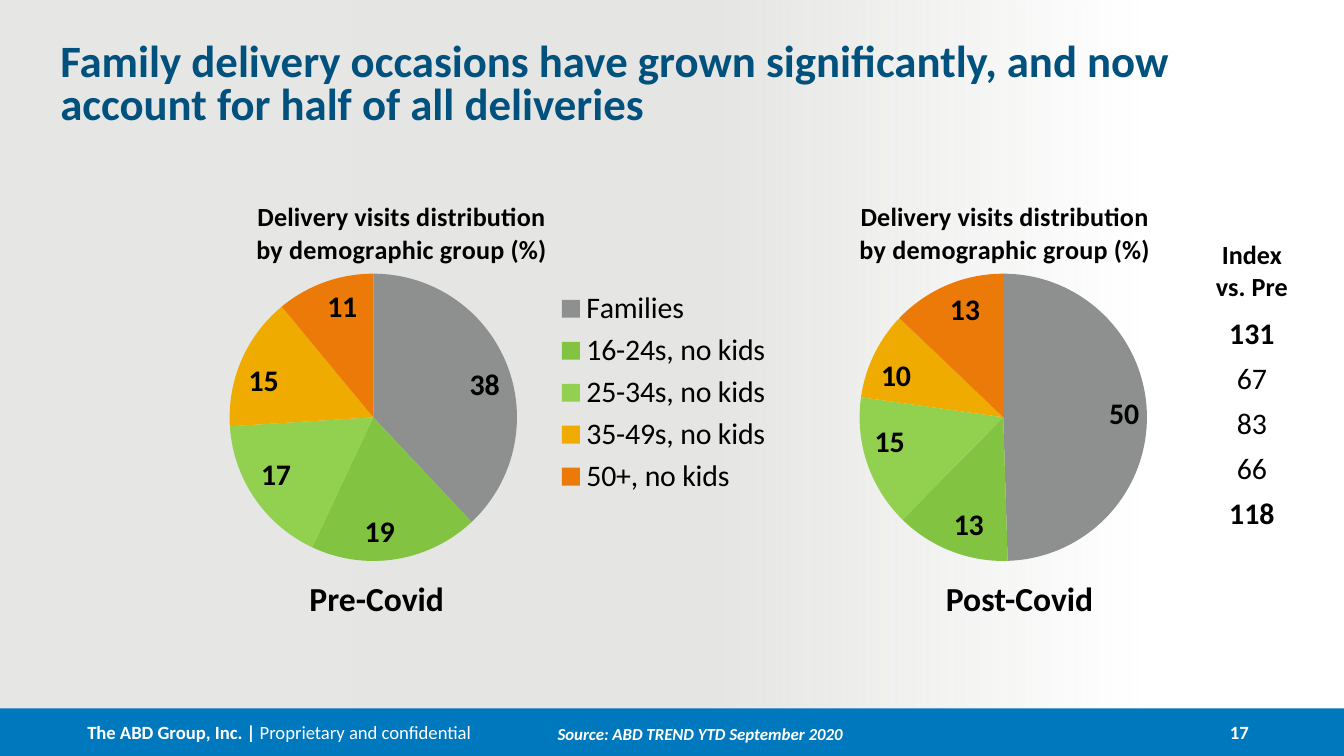
from lxml import etree
from pptx import Presentation
from pptx.chart.data import CategoryChartData
from pptx.dml.color import RGBColor
from pptx.enum.chart import XL_CHART_TYPE, XL_LABEL_POSITION, XL_LEGEND_POSITION
from pptx.enum.shapes import MSO_SHAPE
from pptx.enum.text import MSO_ANCHOR, MSO_AUTO_SIZE, PP_ALIGN
from pptx.oxml.ns import qn
from pptx.util import Cm, Pt

PIE = XL_CHART_TYPE.PIE
INSIDE_END = XL_LABEL_POSITION.INSIDE_END
LEGEND_RIGHT = XL_LEGEND_POSITION.RIGHT
RECTANGLE = MSO_SHAPE.RECTANGLE
TOP, MIDDLE = MSO_ANCHOR.TOP, MSO_ANCHOR.MIDDLE
LEFT, CENTER, RIGHT = PP_ALIGN.LEFT, PP_ALIGN.CENTER, PP_ALIGN.RIGHT
NO_AUTOFIT = MSO_AUTO_SIZE.NONE

FONT = "Calibri"
BLACK = RGBColor(0x00, 0x00, 0x00)
WHITE = RGBColor(0xFF, 0xFF, 0xFF)
BLUE = RGBColor(0x00, 0x78, 0xBE)
NAVY = RGBColor(0x00, 0x51, 0x7D)
SLICE_COLORS = [
    RGBColor(0x8E, 0x90, 0x8F),
    RGBColor(0x82, 0xC3, 0x41),
    RGBColor(0x92, 0xD0, 0x50),
    RGBColor(0xF0, 0xAB, 0x00),
    RGBColor(0xEC, 0x7A, 0x08),
]
BACKDROP_STOPS = [(0, "E5E5E3", 0), (38, "E5E5E3", 100), (100, "E6E6E5", 100)]

TITLE = ("Family delivery occasions have grown significantly, "
         "and now account for half of all deliveries")
CHART_TITLE = "Delivery visits distribution\nby demographic group (%)"
GROUPS = ["Families", "16-24s, no kids", "25-34s, no kids", "35-49s, no kids", "50+, no kids"]
PERIODS = [
    {"name": "Pre-Covid", "values": [38, 19, 17, 15, 11], "left": -2.24, "width": 17.09,
     "title_x": 0.41, "caption_left": 4.11, "legend": True},
    {"name": "Post-Covid", "values": [50, 13, 15, 10, 13], "left": 13.61, "width": 9.83,
     "title_x": 0.26, "caption_left": 16.26, "legend": False},
]
INDEX_HEADING = "Index\vvs. Pre"
INDEX_VALUES = ["131", "67", "83", "66", "118"]
GROWING = {"131", "118"}
COMPANY = "The ABD Group, Inc. | "
CONFIDENTIAL = "Proprietary and confidential"
SOURCE = "Source: ABD TREND YTD September 2020"
PAGE_NUMBER = "17"

SLIDE_WIDTH, SLIDE_HEIGHT = 25.4, 14.29
FOOTER_TOP, FOOTER_HEIGHT = 13.39, 0.9
CHART_TOP, CHART_HEIGHT = 2.95, 8.86
PIE_CENTER, PIE_TOP, PIE_HEIGHT = 0.544, 0.251, 0.613
INDEX_LEFT, INDEX_WIDTH = 22.3, 2.72


def style(font, size, color=BLACK, bold=True, italic=False):
    font.name, font.size, font.bold, font.italic = FONT, Pt(size), bold, italic
    font.color.rgb = color


def add_rectangle(slide, left, top, width, height):
    shape = slide.shapes.add_shape(RECTANGLE, Cm(left), Cm(top), Cm(width), Cm(height))
    shape.shadow.inherit = False
    shape.line.fill.background()
    return shape


def add_text(slide, box, text, size, color=BLACK, align=CENTER, anchor=TOP, italic=False):
    frame = slide.shapes.add_textbox(*map(Cm, box)).text_frame
    frame.word_wrap = True
    frame.vertical_anchor = anchor
    frame.text = text
    for paragraph in frame.paragraphs:
        paragraph.alignment = align
        for run in paragraph.runs:
            style(run.font, size, color, italic=italic)
    return frame


def add_backdrop(slide):
    shape = add_rectangle(slide, 0, 0, 21.49, FOOTER_TOP)
    shape.fill.gradient()
    shape.fill.gradient_angle = 180
    stops = shape._element.spPr.find(qn("a:gradFill")).find(qn("a:gsLst"))
    for stop in list(stops):
        stops.remove(stop)
    for position, color, opacity in BACKDROP_STOPS:
        stop = etree.SubElement(stops, qn("a:gs"), pos=str(position * 1000))
        fill = etree.SubElement(stop, qn("a:srgbClr"), val=color)
        etree.SubElement(fill, qn("a:alpha"), val=str(opacity * 1000))


def place(element, target=None, **fractions):
    for old in element.findall(qn("c:layout")):
        element.remove(old)
    layout = etree.Element(qn("c:layout"))
    manual = etree.SubElement(layout, qn("c:manualLayout"))
    if target:
        etree.SubElement(manual, qn("c:layoutTarget"), val=target)
    for axis in "xy":
        etree.SubElement(manual, qn(f"c:{axis}Mode"), val="edge")
    for name, value in fractions.items():
        etree.SubElement(manual, qn(f"c:{name}"), val=f"{value:.3f}")
    overlay = element.find(qn("c:overlay"))
    element.insert(0 if overlay is None else element.index(overlay), layout)


def add_pie(slide, period):
    data = CategoryChartData(number_format="0")
    data.categories = GROUPS
    data.add_series(period["name"], period["values"])
    chart = slide.shapes.add_chart(PIE, Cm(period["left"]), Cm(CHART_TOP), Cm(period["width"]),
                                   Cm(CHART_HEIGHT), data).chart
    style(chart.font, 18, bold=False)

    chart.has_title = True
    chart.chart_title.text_frame.text = CHART_TITLE
    for paragraph in chart.chart_title.text_frame.paragraphs:
        style(paragraph.runs[0].font, 14)
    place(chart.chart_title._element, x=period["title_x"], y=0.083)

    pie_width = PIE_HEIGHT * CHART_HEIGHT / period["width"]
    place(chart._chartSpace.chart.plotArea, "inner", x=PIE_CENTER - pie_width / 2, y=PIE_TOP,
          w=pie_width, h=PIE_HEIGHT)

    chart.has_legend = period["legend"]
    if chart.has_legend:
        chart.legend.position = LEGEND_RIGHT
        chart.legend.include_in_layout = False
        style(chart.legend.font, 16, bold=False)
        place(chart.legend._element, x=0.745, y=0.275, w=0.24, h=0.46)

    plot = chart.plots[0]
    plot.vary_by_categories = True
    for number, color in enumerate(SLICE_COLORS):
        fill = plot.series[0].points[number].format.fill
        fill.solid()
        fill.fore_color.rgb = color
    plot.has_data_labels = True
    labels = plot.data_labels
    labels.show_value = True
    labels.show_percentage = False
    labels.number_format, labels.number_format_is_linked = "0", False
    labels.position = INSIDE_END
    style(labels.font, 16)


def add_title(slide):
    title = slide.shapes.title
    title.left, title.top, title.width, title.height = Cm(1.14), Cm(0.81), Cm(23.5), Cm(1.27)
    frame = title.text_frame
    frame.text = TITLE
    frame.word_wrap = True
    frame.auto_size = NO_AUTOFIT
    frame.vertical_anchor = TOP
    frame.margin_left = frame.margin_top = frame.margin_right = frame.margin_bottom = 0
    paragraph = frame.paragraphs[0]
    paragraph.alignment = LEFT
    paragraph.line_spacing = 0.8
    style(paragraph.runs[0].font, 24, NAVY)


def add_index(slide):
    add_text(slide, (INDEX_LEFT, 4.39, INDEX_WIDTH, 1.45), INDEX_HEADING, 14)
    frame = add_text(slide, (INDEX_LEFT, 5.82, INDEX_WIDTH, 4.52), "\n".join(INDEX_VALUES), 16)
    for paragraph in frame.paragraphs:
        paragraph.space_after = Pt(4.9)
        paragraph.runs[0].font.bold = paragraph.text in GROWING


def add_footer(slide):
    bar = add_rectangle(slide, 0, FOOTER_TOP, SLIDE_WIDTH, FOOTER_HEIGHT)
    bar.fill.solid()
    bar.fill.fore_color.rgb = BLUE
    frame = add_text(slide, (1.65, FOOTER_TOP, 10.44, FOOTER_HEIGHT), COMPANY, 10, WHITE,
                     LEFT, MIDDLE)
    frame.margin_left = 0
    run = frame.paragraphs[0].add_run()
    run.text = CONFIDENTIAL
    style(run.font, 10, WHITE, bold=False)
    add_text(slide, (8.66, 13.56, 9.14, 0.66), SOURCE, 9, WHITE, italic=True)
    number = add_text(slide, (22.33, FOOTER_TOP, 1.65, FOOTER_HEIGHT), PAGE_NUMBER, 10, WHITE,
                      RIGHT, MIDDLE)
    number.margin_right = Cm(0.38)


def main():
    presentation = Presentation()
    presentation.slide_width, presentation.slide_height = Cm(SLIDE_WIDTH), Cm(SLIDE_HEIGHT)
    slide = presentation.slides.add_slide(presentation.slide_layouts[5])
    add_backdrop(slide)
    shapes = slide.shapes._spTree
    shapes.append(slide.shapes.title._element)
    add_title(slide)
    for period in PERIODS:
        add_pie(slide, period)
        add_text(slide, (period["caption_left"], 10.8, 6.02, 1.02), period["name"], 18)
    add_index(slide)
    add_footer(slide)
    presentation.save("out.pptx")


if __name__ == "__main__":
    main()
